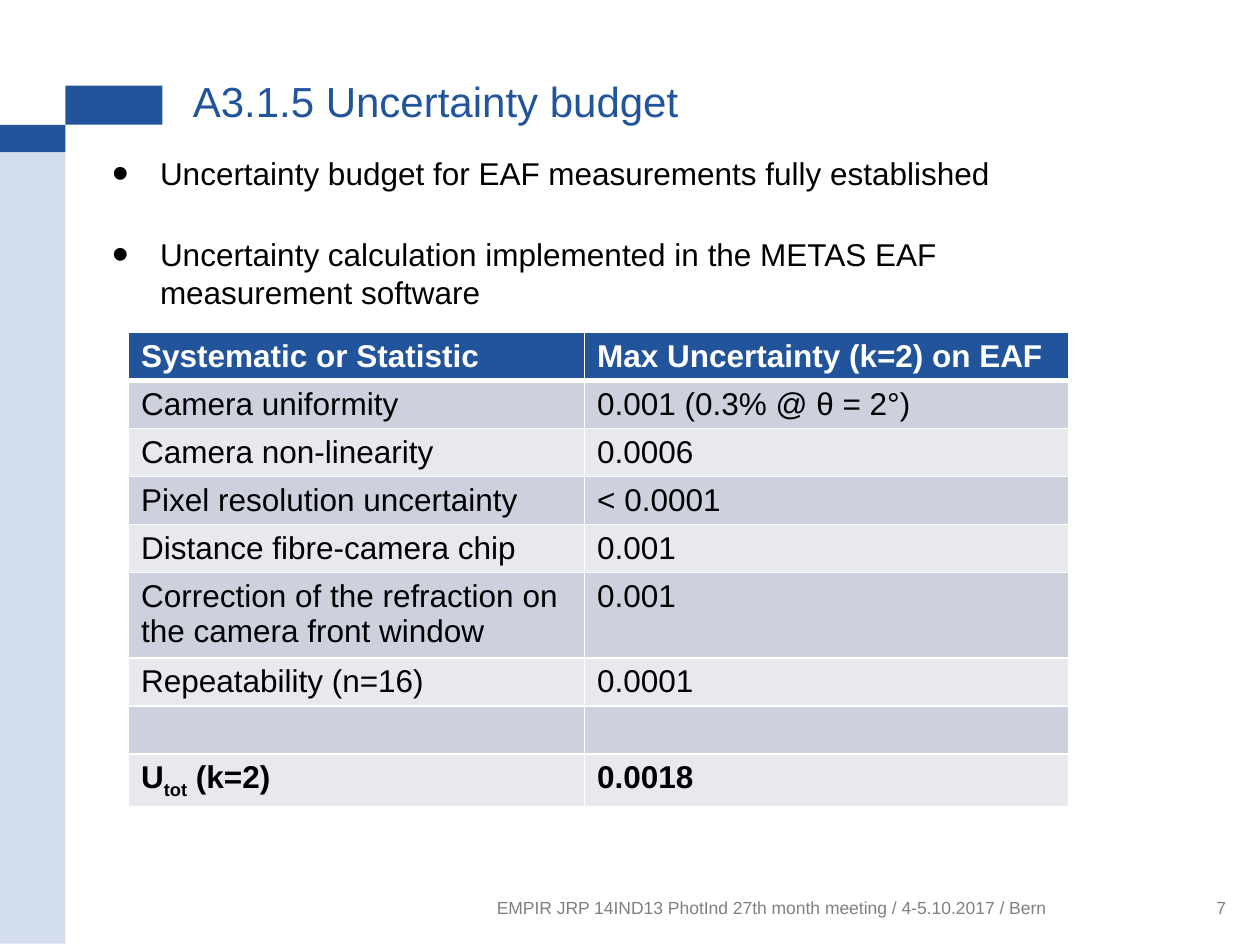
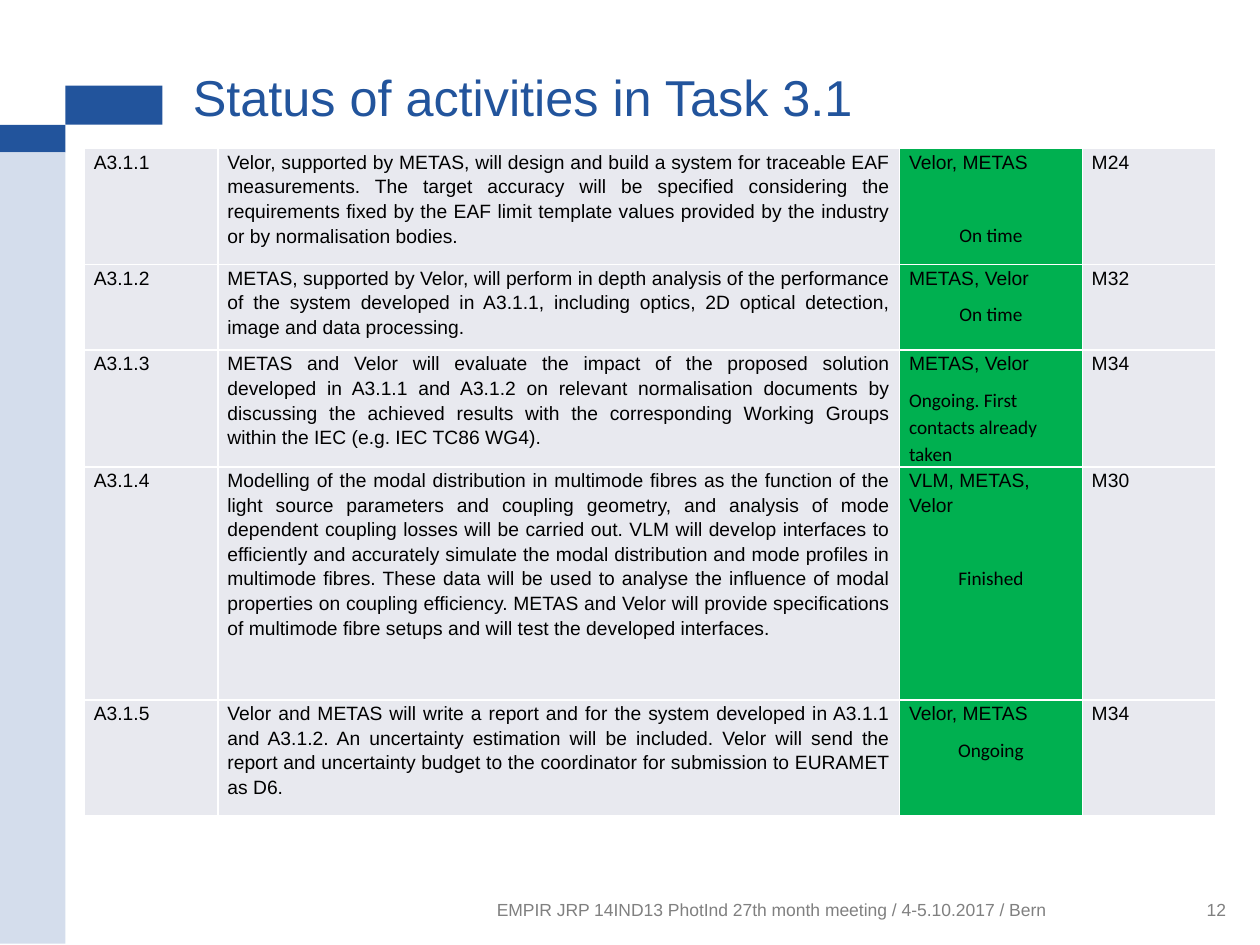
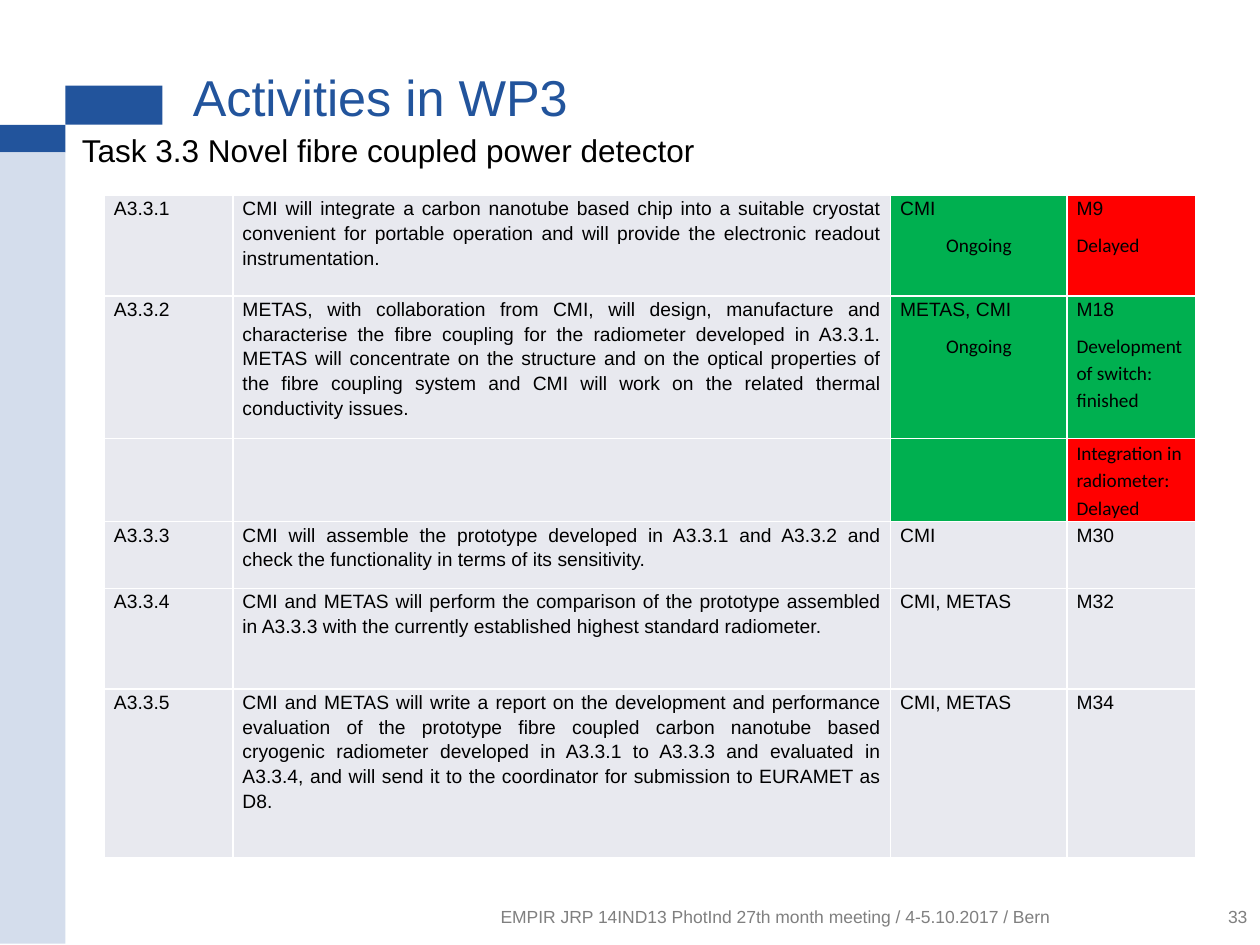
import pptx
import pptx.dml.color
import pptx.enum.shapes
import pptx.enum.text
import pptx.oxml
import pptx.util
import lxml.etree

Inches = pptx.util.Inches
Pt = pptx.util.Pt
Align = pptx.enum.text.PP_ALIGN
Anchor = pptx.enum.text.MSO_ANCHOR
SPACE = "http://schemas.openxmlformats.org/drawingml/2006/main"
BLUE, PALE, GREY = "22549C", "D4DDEC", "808080"
WHITE, BLACK = "FFFFFF", "000000"
DARK, LIGHT = "CDD1DE", "E8E9EF"
TINTS = {"-": LIGHT, "G": "00B050", "R": "FF0000"}
FOOT = "EMPIR JRP 14IND13 PhotInd 27th month meeting / 4-5.10.2017 / Bern"


def hue(code):
    return pptx.dml.color.RGBColor.from_string(code)


def grid(page, left, top, cols, rows):
    frame = page.shapes.add_table(len(rows), len(cols), Inches(left), Inches(top),
                                  Inches(sum(cols)), Inches(sum(rows)))
    table = frame.table
    table.first_row = table.horz_banding = False
    for col, width in zip(table.columns, cols):
        col.width = Inches(width)
    for row, height in zip(table.rows, rows):
        row.height = Inches(height)
    for cell in table.iter_cells():
        props = cell._tc.get_or_add_tcPr()
        for side in ("lnL", "lnR", "lnT", "lnB"):
            props.append(pptx.oxml.parse_xml(
                f'<a:{side} xmlns:a="{SPACE}" w="12700"><a:solidFill>'
                f'<a:srgbClr val="{WHITE}"/></a:solidFill></a:{side}>'))
    return table


deck = pptx.Presentation()
deck.slide_width, deck.slide_height = Inches(10), Inches(7.5)

bands = [
    (0.52, 0.68, 0.77, 0.31, BLUE),
    (0, 0.99, 0.52, 0.22, BLUE),
    (0, 1.21, 0.52, 6.28, PALE),
]
heads = [
    ("A3.1.5 Uncertainty budget", 24, 0.44, 1, "7", 9.73, 8.3, 7.13),
    ("Status of activities in Task 3.1", 28.8, 0.39, 5, "12", 9.73, 8.3, 7.14),
    ("Activities in WP3", 28.8, 0.39, 1, "33", 9.9, 8.33, 7.2),
]
pages = []
for text, size, height, kind, num, edge, end, base in heads:
    page = deck.slides.add_slide(deck.slide_layouts[kind])
    pages.append(page)
    for x, y, w, h, tone in bands:
        band = page.shapes.add_shape(pptx.enum.shapes.MSO_SHAPE.RECTANGLE,
                                     Inches(x), Inches(y), Inches(w), Inches(h))
        band.shadow.inherit = False
        band.fill.solid()
        band.fill.fore_color.rgb = hue(tone)
        band.line.fill.background()

    title = page.shapes.title
    title.left, title.top = Inches(1.53), Inches(0.6)
    title.width, title.height = Inches(8.19), Inches(height)
    frame = title.text_frame
    frame.text = text
    frame.vertical_anchor = Anchor.TOP
    frame.auto_size = pptx.enum.text.MSO_AUTO_SIZE.NONE
    frame.margin_left = frame.margin_right = frame.margin_top = frame.margin_bottom = 0
    para = frame.paragraphs[0]
    para.alignment = Align.LEFT
    para.line_spacing = Pt(29)
    para.font.name, para.font.size = "Arial", Pt(size)
    para.font.color.rgb = hue(BLUE)

    for note, right, width in ((num, edge, 0.34), (FOOT, end, 6.77)):
        box = page.shapes.add_textbox(Inches(right - width), Inches(base),
                                      Inches(width), Inches(0.16))
        frame = box.text_frame
        frame.text = note
        frame.word_wrap = True
        frame.vertical_anchor = Anchor.BOTTOM
        frame.margin_left = frame.margin_right = frame.margin_top = frame.margin_bottom = 0
        para = frame.paragraphs[0]
        para.alignment = Align.RIGHT
        para.font.name, para.font.size = "Arial", Pt(10)
        para.font.color.rgb = hue(GREY)

points = [
    "Uncertainty budget for EAF measurements fully established",
    "Uncertainty calculation implemented in the METAS EAF measurement software",
]
bodies = [
    (pages[0], (0.79, 1.17, 7.71, 1.42), points, True),
    (pages[2], (0.55, 0.99, 9.45, 0.39), ["Task 3.3 Novel fibre coupled power detector"], False),
]
for page, place, lines, dots in bodies:
    body = page.placeholders[1]
    body.left, body.top, body.width, body.height = [Inches(n) for n in place]
    frame = body.text_frame
    frame.text = "\n".join(lines)
    frame.auto_size = pptx.enum.text.MSO_AUTO_SIZE.NONE
    for i, para in enumerate(frame.paragraphs):
        para.space_before = Pt(25 if i else 0)
        props = para._p.get_or_add_pPr()
        indent = Inches(0.38) if dots else 0
        props.set("marL", str(indent))
        props.set("indent", str(-indent))
        if dots:
            lxml.etree.SubElement(props, f"{{{SPACE}}}buSzPct", val="150000")
            lxml.etree.SubElement(props, f"{{{SPACE}}}buFont", typeface="Arial")
            lxml.etree.SubElement(props, f"{{{SPACE}}}buChar", char="•")
        else:
            lxml.etree.SubElement(props, f"{{{SPACE}}}buNone")
        para.font.name, para.font.size = "Arial", Pt(18)
        para.font.color.rgb = hue(BLACK)

budget = [
    ("Systematic or Statistic", "Max Uncertainty (k=2) on EAF"),
    ("Camera uniformity", "0.001 (0.3% @ θ = 2°)"),
    ("Camera non-linearity", "0.0006"),
    ("Pixel resolution uncertainty", "< 0.0001"),
    ("Distance fibre-camera chip", "0.001"),
    ("Correction of the refraction on the camera front window", "0.001"),
    ("Repeatability (n=16)", "0.0001"),
    ("", ""),
    ("U|tot| (k=2)", "0.0018"),
]
last = len(budget) - 1
table = grid(pages[0], 1.02, 2.64, [3.62, 3.84], [0.37] * 5 + [0.65] + [0.37] * 3)
for r, row in enumerate(budget):
    for c, text in enumerate(row):
        cell = table.cell(r, c)
        cell.margin_bottom = Inches(0.03)
        cell.fill.solid()
        cell.fill.fore_color.rgb = hue(BLUE if r == 0 else DARK if r % 2 else LIGHT)
        para = cell.text_frame.paragraphs[0]
        para.font.name, para.font.size = "Arial", Pt(18)
        para.font.bold = r in (0, last)
        para.font.color.rgb = hue(BLACK if r else WHITE)
        for i, part in enumerate(text.split("|") if text else []):
            run = para.add_run()
            run.text = part
            if i == 1:
                run._r.get_or_add_rPr().set("baseline", "-25000")
for r, side in ((0, "lnB"), (1, "lnT")):
    for cell in table.rows[r].cells:
        cell._tc.tcPr.find(f"{{{SPACE}}}{side}").set("w", "38100")

early = [
    ("A3.1.1", "Velor, supported by METAS, will design and build a system for traceable EAF measurements. The target accuracy will be specified considering the requirements fixed by the EAF limit template values provided by the industry or by normalisation bodies.",
     "Velor, METAS|On time", "M24", "--G-"),
    ("A3.1.2", "METAS, supported by Velor, will perform in depth analysis of the performance of the system developed in A3.1.1, including optics, 2D optical detection, image and data processing.",
     "METAS, Velor|On time", "M32", "--G-"),
    ("A3.1.3", "METAS and Velor will evaluate the impact of the proposed solution developed in A3.1.1 and A3.1.2 on relevant normalisation documents by discussing the achieved results with the corresponding Working Groups within the IEC (e.g. IEC TC86 WG4).",
     "METAS, Velor|Ongoing. First contacts already taken", "M34", "--G-"),
    ("A3.1.4", "Modelling of the modal distribution in multimode fibres as the function of the light source parameters and coupling geometry, and analysis of mode dependent coupling losses will be carried out. VLM will develop interfaces to efficiently and accurately simulate the modal distribution and mode profiles in multimode fibres. These data will be used to analyse the influence of modal properties on coupling efficiency. METAS and Velor will provide specifications of multimode fibre setups and will test the developed interfaces.",
     "VLM, METAS, Velor|Finished", "M30", "--G-"),
    ("A3.1.5", "Velor and METAS will write a report and for the system developed in A3.1.1 and A3.1.2. An uncertainty estimation will be included. Velor will send the report and uncertainty budget to the coordinator for submission to EURAMET as D6.",
     "Velor, METAS|Ongoing", "M34", "--G-"),
]
late = [
    ("A3.3.1", "CMI will integrate a carbon nanotube based chip into a suitable cryostat convenient for portable operation and will provide the electronic readout instrumentation.",
     "CMI|Ongoing", "M9|Delayed", "--GR"),
    ("A3.3.2", "METAS, with collaboration from CMI, will design, manufacture and characterise the fibre coupling for the radiometer developed in A3.3.1. METAS will concentrate on the structure and on the optical properties of the fibre coupling system and CMI will work on the related thermal conductivity issues.",
     "METAS, CMI|Ongoing", "M18|Development of switch: finished", "--GG"),
    ("", "", "", "|Integration in radiometer: Delayed", "--GR"),
    ("A3.3.3", "CMI will assemble the prototype developed in A3.3.1 and A3.3.2 and check the functionality in terms of its sensitivity.",
     "CMI", "M30", "----"),
    ("A3.3.4", "CMI and METAS will perform the comparison of the prototype assembled in A3.3.3 with the currently established highest standard radiometer.",
     "CMI, METAS", "M32", "----"),
    ("A3.3.5", "CMI and METAS will write a report on the development and performance evaluation of the prototype fibre coupled carbon nanotube based cryogenic radiometer developed in A3.3.1 to A3.3.3 and evaluated in A3.3.4, and will send it to the coordinator for submission to EURAMET as D8.",
     "CMI, METAS", "M34", "----"),
]
plans = [
    (early, grid(pages[1], 0.67, 1.18, [1.06, 5.41, 1.45, 1.06],
                 [0.92, 0.68, 0.92, 1.85, 0.92]), (0, 3)),
    (late, grid(pages[2], 0.83, 1.55, [1.02, 5.22, 1.4, 1.02],
                [0.8, 1.13, 0.66, 0.53, 0.8, 1.34]), ()),
]
for tasks, table, gaps in plans:
    for r, (*texts, tints) in enumerate(tasks):
        for c, text in enumerate(texts):
            cell = table.cell(r, c)
            cell.fill.solid()
            cell.fill.fore_color.rgb = hue(TINTS[tints[c]])
            cell.margin_left = cell.margin_right = Pt(5.4)
            cell.margin_top = cell.margin_bottom = 0
            name, _, state = text.partition("|")
            parts = [(t, f) for t, f in ((name, "Arial"), (state, "Calibri")) if t]
            frame = cell.text_frame
            for i, (part, font) in enumerate(parts):
                para = frame.add_paragraph() if i else frame.paragraphs[0]
                para.text = part
                para.line_spacing = 1.15
                para.space_before = Pt((24 if r in gaps else 3) if i else 0)
                para.space_after = Pt(3)
                if c < 2:
                    para.alignment = Align.JUSTIFY
                elif c == 2 and i and len(part) < 10:
                    para.alignment = Align.CENTER
                else:
                    para.alignment = Align.LEFT
                para.font.name, para.font.size = font, Pt(11)
                para.font.color.rgb = hue(BLACK)

deck.save("out.pptx")
